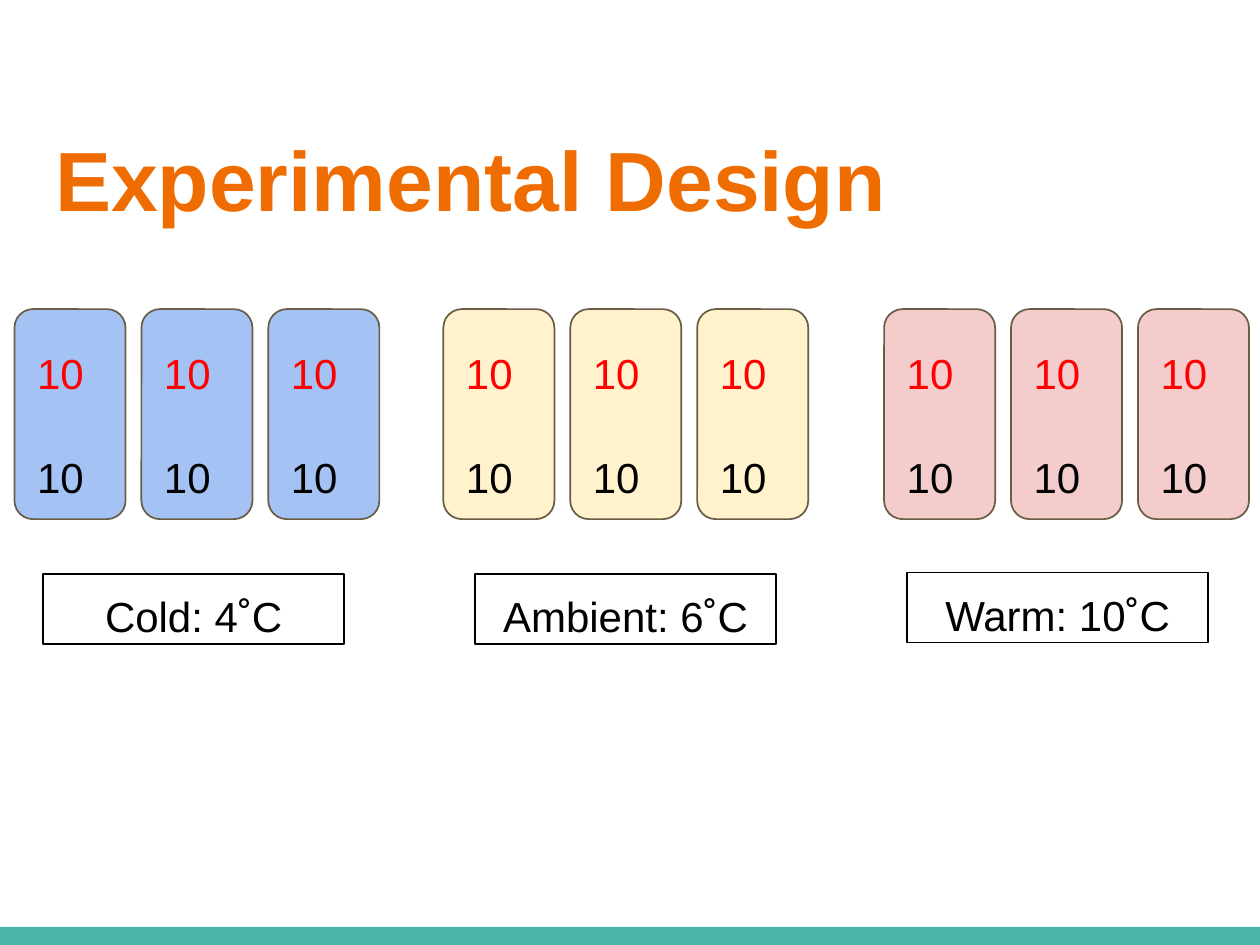
import pptx
import pptx.util
import pptx.dml.color
import pptx.enum.shapes
import pptx.enum.text

Pt = pptx.util.Pt
SHAPES = pptx.enum.shapes.MSO_SHAPE
ALIGN = pptx.enum.text.PP_ALIGN

COLORS = {
    "title": "EF6C00", "footer": "4DB6AC", "outline": "695D46",
    "red": "FF0000", "black": "000000",
    "cold": "A4C2F4", "ambient": "FFF2CC", "warm": "F4CCCC",
}
FRAME_FORMAT = {
    "margin_left": Pt(5), "margin_right": Pt(5),
    "margin_top": Pt(5), "margin_bottom": Pt(5),
    "word_wrap": True,
    "auto_size": pptx.enum.text.MSO_AUTO_SIZE.NONE,
    "vertical_anchor": pptx.enum.text.MSO_ANCHOR.TOP,
}
TANKS_PER_TREATMENT = 3
TANK_WIDTH, TANK_HEIGHT, TANK_PITCH = 47.6, 90, 54.4

# Treatment: color, tanks left, label left, label top, label text
TREATMENTS = [
    ("cold", 6.2, 18.5, 246.1, "Cold: 4˚C"),
    ("ambient", 190, 203.6, 246.1, "Ambient: 6˚C"),
    ("warm", 378.9, 388.8, 245.4, "Warm: 10˚C"),
]


def rgb(color):
    return pptx.dml.color.RGBColor.from_string(COLORS[color])


def write(frame, lines, size=18, bold=False, align=ALIGN.LEFT, gap=0):
    """Fill a text frame with (text, color) lines."""
    for name, value in FRAME_FORMAT.items():
        setattr(frame, name, value)
    for index, (text, color) in enumerate(lines):
        paragraph = frame.paragraphs[0] if index == 0 else frame.add_paragraph()
        run = paragraph.add_run()
        run.text = text
        run.font.color.rgb = rgb(color)
        spacing = {"alignment": align, "line_spacing": 1.1,
                   "space_before": Pt(gap if index else 0)}
        for name, value in spacing.items():
            setattr(paragraph, name, value)
        for name, value in {"name": "Arial", "size": Pt(size), "bold": bold}.items():
            setattr(run.font, name, value)


def add_box(slide, kind, box, fill=None, line=None):
    shape = slide.shapes.add_shape(kind, *map(Pt, box))
    shape.shadow.inherit = False
    if fill:
        shape.fill.solid()
        shape.fill.fore_color.rgb = rgb(fill)
    else:
        shape.fill.background()
    if line:
        shape.line.color.rgb = rgb(line)
        shape.line.width = Pt(0.75)
    else:
        shape.line.fill.background()
    return shape


def add_title(slide, box):
    title = slide.shapes.title
    for name, value in zip(("left", "top", "width", "height"), box):
        setattr(title, name, Pt(value))
    write(title.text_frame, [("Experimental Design", "title")], size=36, bold=True)


def add_tank(slide, box, fill):
    """Place one tank with its red and black counts."""
    left, top, width, height = box
    add_box(slide, SHAPES.ROUNDED_RECTANGLE, box, fill, "outline")
    counts = slide.shapes.add_textbox(
        Pt(left + 4.7), Pt(top + 9.5), Pt(width - 9.4), Pt(height - 20))
    write(counts.text_frame, [("10", "red"), ("10", "black")], gap=20.6)


def add_tanks(slide, box, fill):
    left, top, width, height = box
    for column in range(TANKS_PER_TREATMENT):
        add_tank(slide, (left + column * TANK_PITCH, top, TANK_WIDTH, height), fill)


def add_label(slide, box, text):
    label = add_box(slide, SHAPES.RECTANGLE, box, line="black")
    write(label.text_frame, [(text, "black")], align=ALIGN.CENTER)


def main():
    deck = pptx.Presentation()
    deck.slide_width, deck.slide_height = Pt(540), Pt(405)
    slide = deck.slides.add_slide(deck.slide_layouts[5])

    # Footer band and title
    add_box(slide, SHAPES.RECTANGLE, (0, 397.3, 540, 7.7), "footer")
    add_title(slide, (18.7, 45.4, 503.3, 41.8))

    # Tanks and temperature label of each treatment
    tanks_width = (TANKS_PER_TREATMENT - 1) * TANK_PITCH + TANK_WIDTH
    for fill, tanks_left, label_left, label_top, text in TREATMENTS:
        add_tanks(slide, (tanks_left, 132.5, tanks_width, TANK_HEIGHT), fill)
        add_label(slide, (label_left, label_top, 129, 30), text)

    deck.save("out.pptx")


if __name__ == "__main__":
    main()
